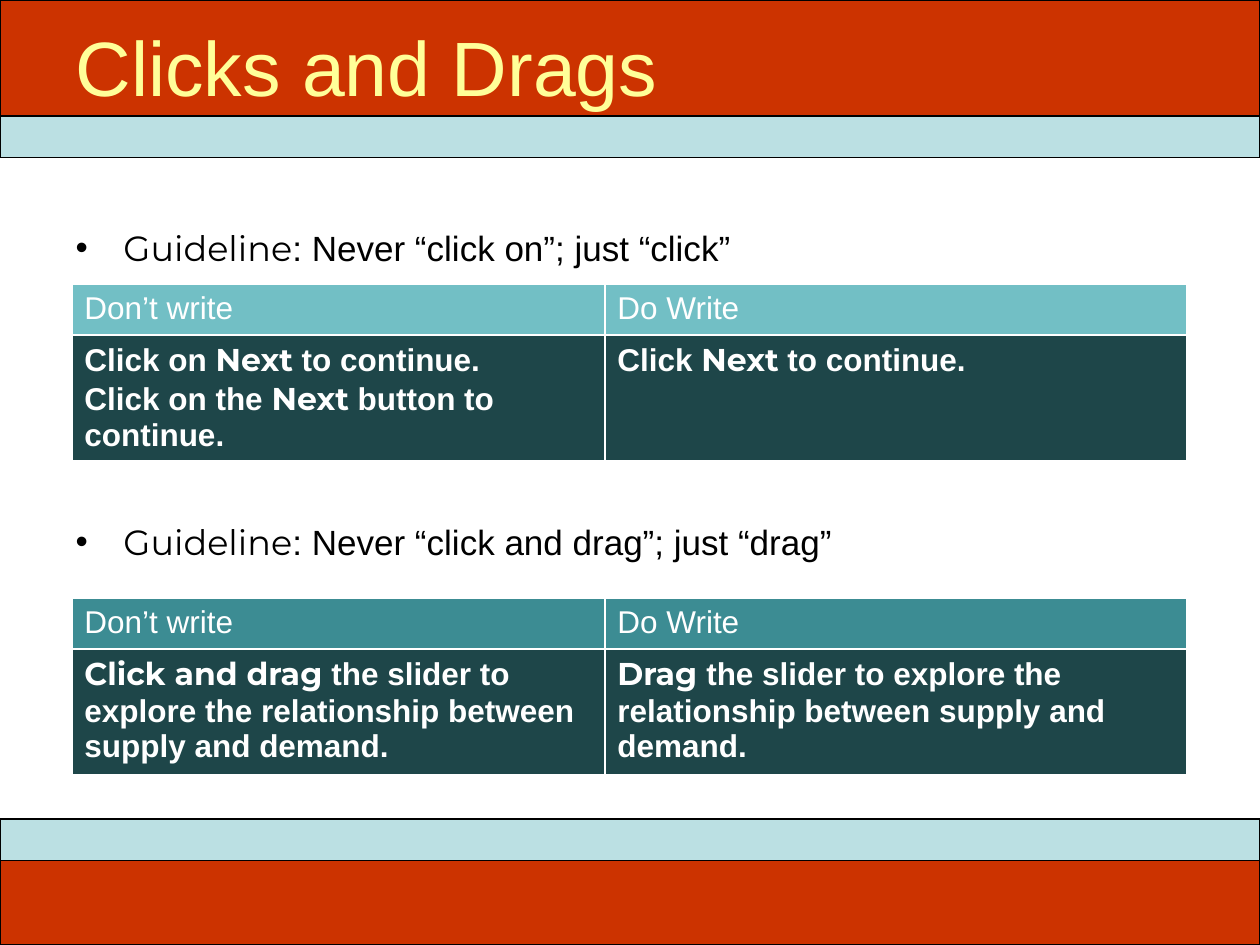
import pptx
import pptx.dml.color
import pptx.enum.shapes
import pptx.enum.text
import pptx.oxml
import pptx.oxml.ns
import pptx.util
from pptx.util import Inches

SANS, ACCENT = "Arial", "Montserrat"
RED, PALE, DARK, WHITE, BLACK = "CC3300", "BBE0E3", "1E4649", "FFFFFF", "000000"

TITLE = "Clicks and Drags"
BANDS = [(0, 0.92, RED), (0.92, 0.33, PALE), (6.5, 0.33, PALE), (6.83, 0.67, RED)]  # top, height, fill

# Every paragraph is a list of (text, font) runs.
GUIDELINES = [
    [("Guideline", ACCENT), (": Never “click on”; just “click”", SANS)],
    [("Guideline", ACCENT), (": Never “click and drag”; just “drag”", SANS)],
]
GUIDELINE_GAP = 143.6  # points, leaves room for the first table

HEADERS = ["Don’t write", "Do Write"]
SLIDER = "the slider to explore the relationship between supply and demand."
TABLES = [
    {"top": 2.26, "header_fill": "72BFC5", "examples": [
        [[("Click on ", SANS), ("Next", ACCENT), (" to continue.", SANS)],
         [("Click on the ", SANS), ("Next", ACCENT), (" button to continue.", SANS)]],
        [[("Click ", SANS), ("Next", ACCENT), (" to continue.", SANS)]],
    ]},
    {"top": 4.75, "header_fill": "3C8C93", "examples": [
        [[("Click and drag ", ACCENT), (SLIDER, SANS)]],
        [[("Drag ", ACCENT), (SLIDER, SANS)]],
    ]},
]
TABLE_LEFT, COLUMN_WIDTHS, ROW_HEIGHTS = 0.57, [4.23, 4.62], [0.4, 1]


def color(hex_value):
    return pptx.dml.color.RGBColor.from_string(hex_value)


def set_fill(target, hex_value):
    target.fill.solid()
    target.fill.fore_color.rgb = color(hex_value)


def place(shape, left, top, width, height):
    shape.left, shape.top = Inches(left), Inches(top)
    shape.width, shape.height = Inches(width), Inches(height)


def write_paragraphs(text_frame, paragraphs, size, hex_value, bold=False):
    """Fill a text frame with paragraphs given as lists of (text, font) runs."""
    text_frame.text = "\n".join("" for _ in paragraphs)
    for paragraph, runs in zip(text_frame.paragraphs, paragraphs):
        for text, font_name in runs:
            run = paragraph.add_run()
            run.text = text
            run.font.name, run.font.size, run.font.bold = font_name, pptx.util.Pt(size), bold
            run.font.color.rgb = color(hex_value)


def set_borders(cell):
    """Draw a 1 pt white line on all sides; borders must precede the cell fill."""
    properties = cell._tc.get_or_add_tcPr()
    for side in ("lnL", "lnR", "lnT", "lnB"):
        properties.append(pptx.oxml.parse_xml(
            f'<a:{side} {pptx.oxml.ns.nsdecls("a")} w="12700"><a:solidFill>'
            f'<a:srgbClr val="{WHITE}"/></a:solidFill></a:{side}>'))


def add_bands(slide):
    for top, height, fill in BANDS:
        band = slide.shapes.add_shape(
            pptx.enum.shapes.MSO_SHAPE.RECTANGLE, 0, Inches(top), Inches(10), Inches(height))
        band.shadow.inherit = False
        set_fill(band, fill)
        band.line.color.rgb = color(BLACK)
        band.line.width = pptx.util.Pt(0.75)
        slide.shapes.element.insert(2, band.element)  # behind the placeholders


def add_title(slide):
    title = slide.shapes.title
    place(title, 0.5, 0.17, 9, 0.7)
    frame = title.text_frame
    write_paragraphs(frame, [[(TITLE, SANS)]], 44, "FFFF99")
    frame.margin_top = frame.margin_bottom = Inches(0.1)
    frame.auto_size = pptx.enum.text.MSO_AUTO_SIZE.NONE
    frame.vertical_anchor = pptx.enum.text.MSO_ANCHOR.MIDDLE
    frame.paragraphs[0].alignment = pptx.enum.text.PP_ALIGN.LEFT


def add_guidelines(slide):
    body = slide.placeholders[1]
    place(body, 0.5, 1.75, 9, 4.67)
    frame = body.text_frame
    write_paragraphs(frame, GUIDELINES, 20, BLACK)
    frame.auto_size = pptx.enum.text.MSO_AUTO_SIZE.NONE
    for index, paragraph in enumerate(frame.paragraphs):
        paragraph.space_before = pptx.util.Pt(index * GUIDELINE_GAP)
        properties = paragraph._p.get_or_add_pPr()
        properties.set("marL", str(Inches(0.38)))
        properties.set("indent", str(Inches(-0.38)))


def add_comparison(slide, top, header_fill, examples):
    table = slide.shapes.add_table(
        2, 2, Inches(TABLE_LEFT), Inches(top),
        Inches(sum(COLUMN_WIDTHS)), Inches(sum(ROW_HEIGHTS))).table
    for row, height in zip(table.rows, ROW_HEIGHTS):
        row.height = Inches(height)
    for index, width in enumerate(COLUMN_WIDTHS):
        table.columns[index].width = Inches(width)
        rows = [([[(HEADERS[index], SANS)]], header_fill, False), (examples[index], DARK, True)]
        for row_index, (paragraphs, fill, bold) in enumerate(rows):
            cell = table.cell(row_index, index)
            write_paragraphs(cell.text_frame, paragraphs, 18, WHITE, bold)
            set_borders(cell)
            set_fill(cell, fill)


def main():
    presentation = pptx.Presentation()
    presentation.slide_width, presentation.slide_height = Inches(10), Inches(7.5)
    slide = presentation.slides.add_slide(presentation.slide_layouts[1])
    add_bands(slide)
    add_title(slide)
    add_guidelines(slide)
    for comparison in TABLES:
        add_comparison(slide, **comparison)
    presentation.save("out.pptx")


if __name__ == "__main__":
    main()
